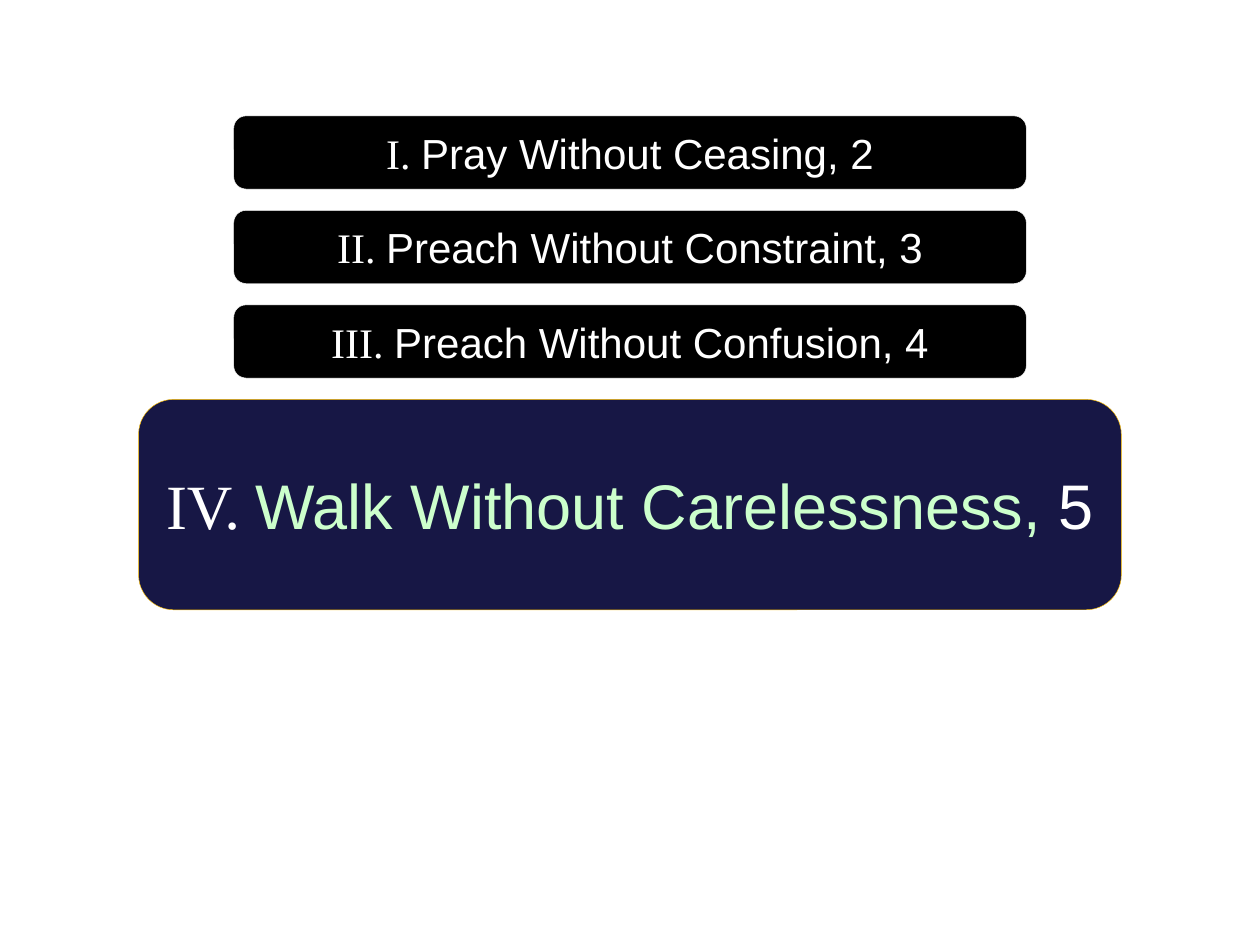
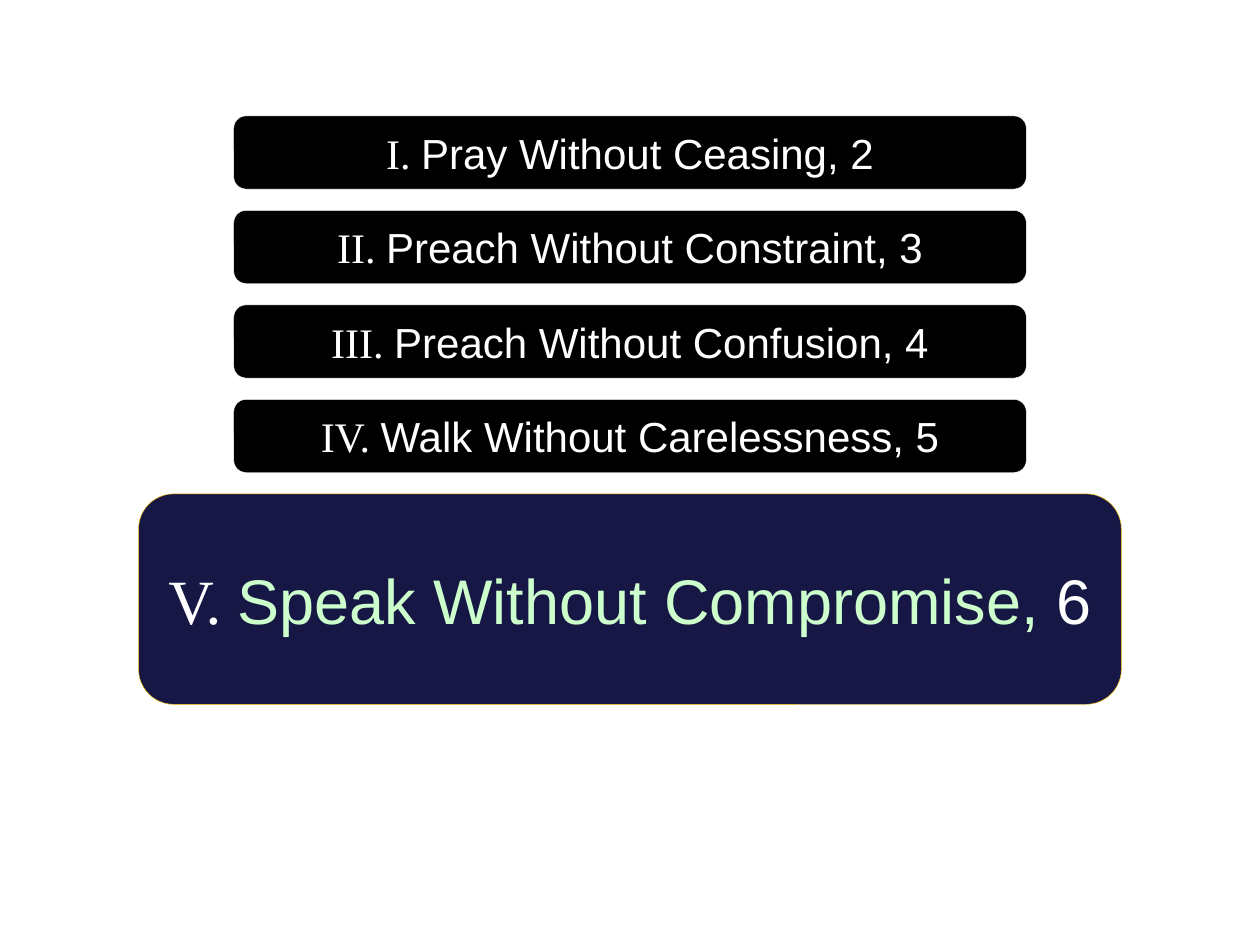
import pptx
import pptx.dml.color
import pptx.enum.shapes
import pptx.enum.text
import pptx.util

SLIDE_WIDTH = pptx.util.Inches(10)
SLIDE_HEIGHT = pptx.util.Inches(7.5)
ROW = SLIDE_HEIGHT / 10
FIRST_ROW_TOP = pptx.util.Inches(0.92)

WHITE = "FFFFFF"
NUMERAL_FONT = "Times New Roman"
HEADING_FONT = "Arial"

PAST_STYLE = {
    "width": 0.629, "height": 0.58, "fill": "000000", "line": WHITE,
    "size": 24, "heading": WHITE,
}
CURRENT_STYLE = {
    "width": 0.78, "height": 1.67, "fill": "171745", "line": "FFC000",
    "size": 36, "heading": "CCFFCC",
}

POINTS = [
    ("I. ", "Pray Without Ceasing, ", "2"),
    ("II. ", "Preach Without Constraint, ", "3"),
    ("III. ", "Preach Without Confusion, ", "4"),
    ("IV. ", "Walk Without Carelessness, ", "5"),
    ("V. ", "Speak Without Compromise, ", "6"),
]


def color(value):
    """Turn a hex string into a colour."""
    return pptx.dml.color.RGBColor.from_string(value)


def add_run(paragraph, text, font_name, size, font_color):
    """Append one formatted run to a paragraph."""
    run = paragraph.add_run()
    run.text = text
    run.font.name = font_name
    run.font.size = pptx.util.Pt(size)
    run.font.color.rgb = color(font_color)


def add_point(slide, top, point, style):
    """Add one outline point as a horizontally centred bar."""
    width = int(SLIDE_WIDTH * style["width"])
    shape = slide.shapes.add_shape(
        pptx.enum.shapes.MSO_SHAPE.ROUNDED_RECTANGLE,
        (SLIDE_WIDTH - width) // 2, int(top),
        width, pptx.util.Inches(style["height"]),
    )
    shape.shadow.inherit = False
    shape.fill.solid()
    shape.fill.fore_color.rgb = color(style["fill"])
    shape.line.color.rgb = color(style["line"])
    shape.line.width = pptx.util.Pt(0.25)

    frame = shape.text_frame
    frame.word_wrap = True
    frame.margin_left = frame.margin_right = pptx.util.Inches(0.05)
    frame.vertical_anchor = pptx.enum.text.MSO_ANCHOR.MIDDLE
    paragraph = frame.paragraphs[0]
    paragraph.alignment = pptx.enum.text.PP_ALIGN.CENTER
    numeral, heading, verse = point
    size = style["size"]
    add_run(paragraph, numeral, NUMERAL_FONT, size, WHITE)
    add_run(paragraph, heading, HEADING_FONT, size, style["heading"])
    add_run(paragraph, verse, HEADING_FONT, size, WHITE)


def add_outline_slide(presentation, current):
    """Add a slide listing the points up to the current, enlarged one."""
    slide = presentation.slides.add_slide(presentation.slide_layouts[6])
    for index, point in enumerate(POINTS[:current + 1]):
        style = CURRENT_STYLE if index == current else PAST_STYLE
        add_point(slide, FIRST_ROW_TOP + index * ROW, point, style)


def main():
    """Build and save the presentation."""
    presentation = pptx.Presentation()
    presentation.slide_width = SLIDE_WIDTH
    presentation.slide_height = SLIDE_HEIGHT
    for current in (3, 4):
        add_outline_slide(presentation, current)
    presentation.save("out.pptx")


if __name__ == "__main__":
    main()
